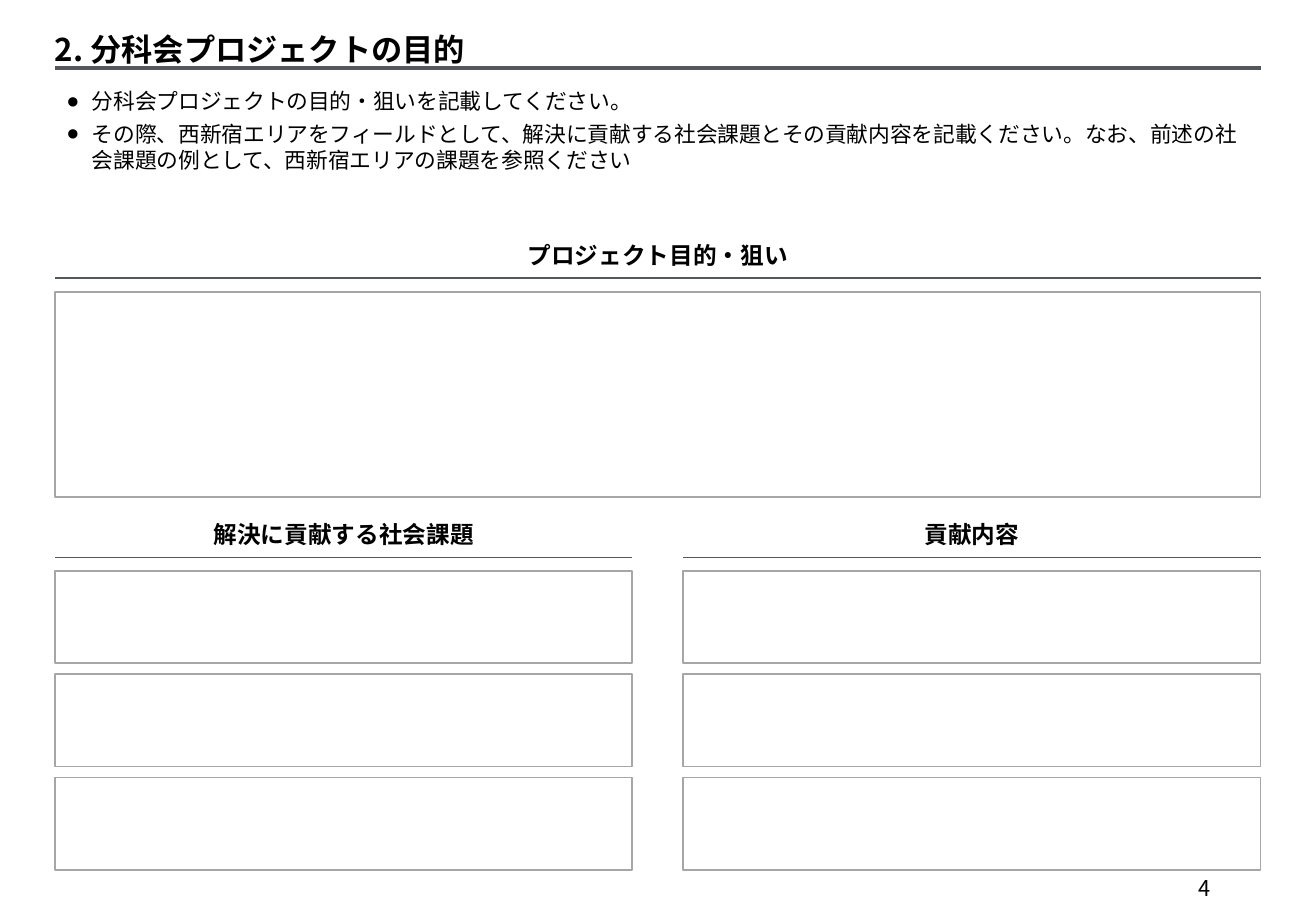
from lxml import etree
from pptx import Presentation
from pptx.dml.color import RGBColor
from pptx.enum.shapes import MSO_CONNECTOR, MSO_SHAPE
from pptx.enum.text import MSO_ANCHOR, PP_ALIGN
from pptx.oxml.ns import qn
from pptx.util import Cm, Pt

BLACK = RGBColor(0x00, 0x00, 0x00)
WHITE = RGBColor(0xFF, 0xFF, 0xFF)
SLATE = RGBColor(0x53, 0x56, 0x5A)
GRAY = RGBColor(0xA6, 0xA6, 0xA6)
RECT = MSO_SHAPE.RECTANGLE
STRAIGHT = MSO_CONNECTOR.STRAIGHT
TOP, MIDDLE, BOTTOM = MSO_ANCHOR.TOP, MSO_ANCHOR.MIDDLE, MSO_ANCHOR.BOTTOM
LEFT, CENTER = PP_ALIGN.LEFT, PP_ALIGN.CENTER
NOTO, OPEN = "Noto Sans CJK JP", "Open Sans"

EDGE, WIDE = 1.15, 25.2
COL, STEP = 12.07, 13.13
HEAD = 0.99
POINTS = [
    "分科会プロジェクトの目的・狙いを記載してください。",
    "その際、西新宿エリアをフィールドとして、解決に貢献する社会課題とその貢献内容を"
    "記載ください。なお、前述の社会課題の例として、西新宿エリアの課題を参照ください",
]


def set_font(para, size, face, bold=False):
    font = para.font
    font.size, font.name, font.bold = Pt(size), face, bold
    font.color.rgb = BLACK
    props = para._p.pPr.find(qn("a:defRPr"))
    asian = etree.Element(qn("a:ea"), typeface=face)
    props.find(qn("a:latin")).addnext(asian)


def set_frame(frame, anchor, side=0, end=0, wrap=True):
    frame.word_wrap = wrap
    frame.vertical_anchor = anchor
    frame.margin_left = frame.margin_right = Cm(side)
    frame.margin_top = frame.margin_bottom = Cm(end)


def add_label(slide, text, x, y, w, h, size, face, anchor, align,
              bold=False, pad=0, wrap=True):
    box = slide.shapes.add_textbox(Cm(x), Cm(y), Cm(w), Cm(h))
    set_frame(box.text_frame, anchor, pad, pad, wrap)
    para = box.text_frame.paragraphs[0]
    para.text, para.alignment = text, align
    set_font(para, size, face, bold)
    return para


def add_rule(slide, x, y, w, weight):
    rule = slide.shapes.add_connector(STRAIGHT, Cm(x), Cm(y), Cm(x + w), Cm(y))
    rule.line.color.rgb = SLATE
    rule.line.width = Pt(weight)
    etree.SubElement(rule._element.spPr, qn("a:effectLst"))


def add_panel(slide, x, y, w, h):
    panel = slide.shapes.add_shape(RECT, Cm(x), Cm(y), Cm(w), Cm(h))
    panel.shadow.inherit = False
    panel.fill.solid()
    panel.fill.fore_color.rgb = WHITE
    panel.line.color.rgb = GRAY
    panel.line.width = Pt(1)
    return panel


# Title with the rule under it
def add_title(slide, text, x, y, w):
    add_rule(slide, x, y + HEAD, w, 2.25)
    para = add_label(slide, text, x, y, w, HEAD, 18.5, NOTO, BOTTOM, LEFT, True)
    para.line_spacing = 1.1


# Bulleted guidance
def add_guide(slide, points, x, y, w, h):
    panel = add_panel(slide, x, y, w, h)
    panel.line.fill.background()
    frame = panel.text_frame
    set_frame(frame, TOP, 0.24, 0.13)
    for i, text in enumerate(points):
        para = frame.add_paragraph() if i else frame.paragraphs[0]
        para.text, para.alignment = text, LEFT
        if i:
            para.space_before = Pt(4)
        props = para._p.get_or_add_pPr()
        props.set("marL", str(Cm(0.53)))
        props.set("indent", str(Cm(-0.53)))
        etree.SubElement(props, qn("a:buFont"), typeface="Arial")
        etree.SubElement(props, qn("a:buChar"), char="●")
        set_font(para, 12.9, NOTO)


# Heading, rule and a stack of equal empty panels
def add_part(slide, text, x, y, w, h, count=1):
    add_label(slide, text, x, y, w, HEAD, 14, OPEN, MIDDLE, CENTER, True, 0.1)
    add_rule(slide, x, y + HEAD, w, 1)
    start, gap = 1.27, 0.23
    tall = (h - start - gap * (count - 1)) / count
    for i in range(count):
        add_panel(slide, x, y + start + i * (tall + gap), w, tall)


def main():
    deck = Presentation()
    deck.slide_width, deck.slide_height = Cm(27.51), Cm(19.05)
    slide = deck.slides.add_slide(deck.slide_layouts[6])

    add_title(slide, "2. 分科会プロジェクトの目的", EDGE, 0.43, WIDE)
    add_guide(slide, POINTS, EDGE, 1.7, WIDE, 2.72)
    add_part(slide, "プロジェクト目的・狙い", EDGE, 4.83, WIDE, 5.56)
    for i, text in enumerate(["解決に貢献する社会課題", "貢献内容"]):
        add_part(slide, text, EDGE + i * STEP, 10.67, COL, 7.52, 3)

    # Page number
    add_label(slide, "4", 24.94, 18.31, 0.46, 0.51, 12.9, NOTO, MIDDLE, CENTER,
              wrap=False)
    deck.save("out.pptx")


if __name__ == "__main__":
    main()
